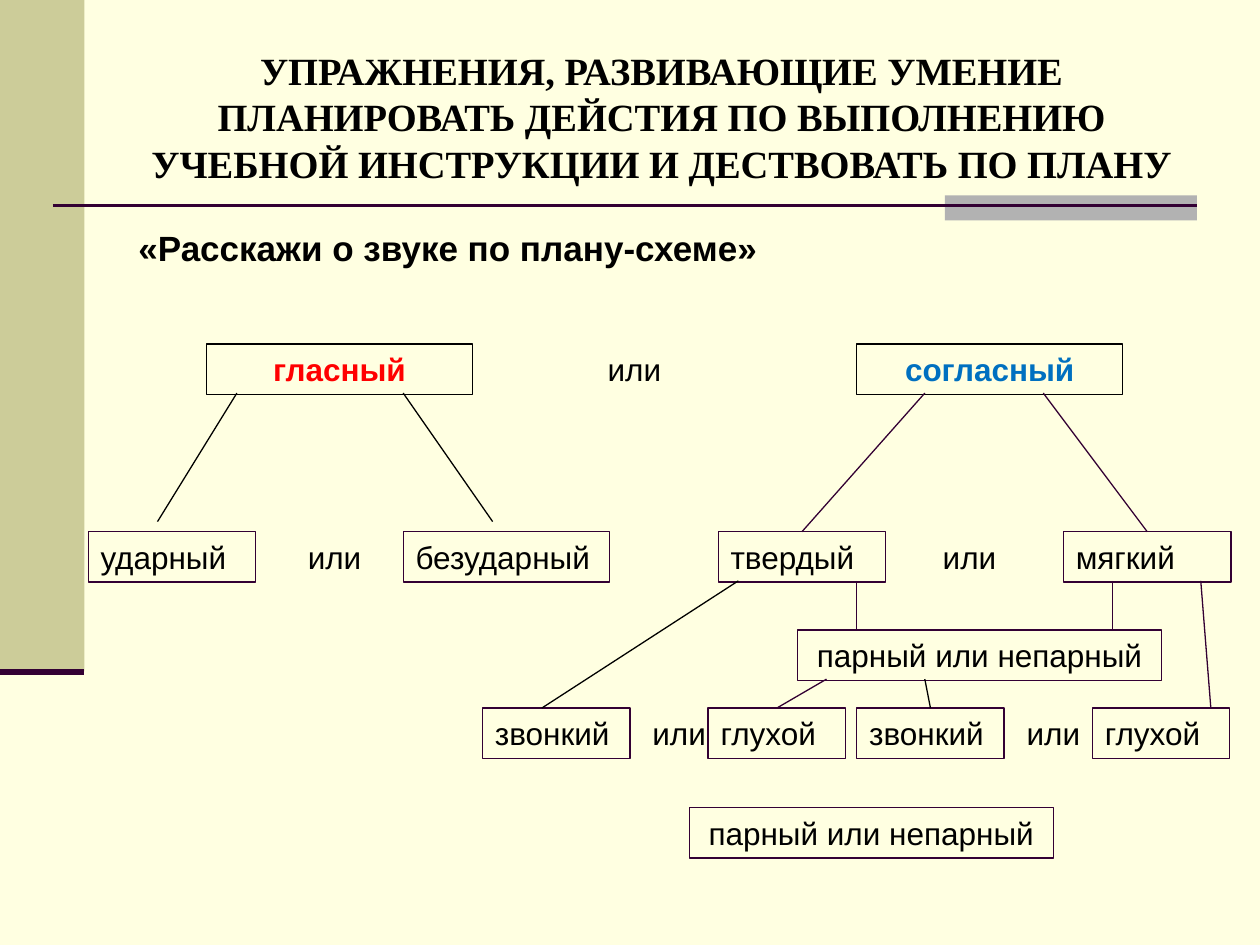
from dataclasses import dataclass

from lxml.etree import SubElement
from pptx import Presentation
from pptx.dml.color import RGBColor
from pptx.enum.shapes import MSO_CONNECTOR, MSO_SHAPE
from pptx.enum.text import MSO_ANCHOR, MSO_AUTO_SIZE, PP_ALIGN
from pptx.oxml.ns import qn
from pptx.util import Inches, Pt

COLUMNS, ROWS = 100, 75
TOP = 0
LEFT, CENTER = PP_ALIGN.LEFT, PP_ALIGN.CENTER


@dataclass(frozen=True)
class Theme:
    background: str = "FFFFE1"
    band: str = "CCCC99"
    accent: str = "B2B2B2"
    plum: str = "330033"
    ink: str = "000000"
    vowel: str = "FF0000"
    consonant: str = "0070C0"
    heading_font: str = "Times New Roman"
    body_font: str = "Arial"
    heading_size: float = 22
    subtitle_size: float = 20
    label_size: float = 18
    thin: float = 0.75
    rule: float = 1.5
    thick: float = 3.5


class SchemeSlide:
    def __init__(self, deck, theme):
        self.theme = theme
        self.page = deck.slides.add_slide(deck.slide_layouts[5])
        self.column = deck.slide_width / COLUMNS
        self.row = deck.slide_height / ROWS
        fill = self.page.background.fill
        fill.solid()
        fill.fore_color.rgb = RGBColor.from_string(theme.background)

    def place(self, column, row, width, height):
        """Turn grid units into slide lengths."""
        return (round(column * self.column), round(row * self.row),
                round(width * self.column), round(height * self.row))

    def add_text(self, box, text, size, color=None, bold=False, align=LEFT, font=None,
                 anchor=MSO_ANCHOR.TOP):
        frame = box.text_frame
        frame.word_wrap = True
        frame.auto_size = MSO_AUTO_SIZE.NONE
        frame.vertical_anchor = anchor
        para = frame.paragraphs[0]
        para.alignment = align
        span = para.add_run()
        span.text = text
        span.font.name = font or self.theme.body_font
        span.font.size = Pt(size)
        span.font.bold = bold
        span.font.color.rgb = RGBColor.from_string(color or self.theme.ink)

    def title(self, text, *area):
        box = self.page.shapes.title
        box.left, box.top, box.width, box.height = self.place(*area)
        self.add_text(box, text, self.theme.heading_size, bold=True, align=CENTER,
                      font=self.theme.heading_font, anchor=MSO_ANCHOR.MIDDLE)

    def block(self, color, *area):
        box = self.page.shapes.add_shape(MSO_SHAPE.RECTANGLE, *self.place(*area))
        box.shadow.inherit = False
        box.fill.solid()
        box.fill.fore_color.rgb = RGBColor.from_string(color)
        box.line.fill.background()

    def node(self, text, *area, color=None, bold=False, align=LEFT, outline=None):
        box = self.page.shapes.add_shape(MSO_SHAPE.RECTANGLE, *self.place(*area))
        box.shadow.inherit = False
        box.fill.background()
        box.line.color.rgb = RGBColor.from_string(outline or self.theme.plum)
        box.line.width = Pt(self.theme.thin)
        self.add_text(box, text, self.theme.label_size, color, bold, align)
        return box

    def label(self, text, *area, size=None, bold=False, align=LEFT):
        box = self.page.shapes.add_textbox(*self.place(*area))
        self.add_text(box, text, size or self.theme.label_size, bold=bold, align=align)

    def line(self, start, end, color, width=None):
        """Draw a line to a grid point, or to the top middle of a box."""
        is_point = isinstance(end, tuple)
        ends = self.place(*start, *(end if is_point else start))
        connector = self.page.shapes.add_connector(MSO_CONNECTOR.STRAIGHT, *ends)
        if not is_point:
            connector.end_connect(end, TOP)
        connector.line.color.rgb = RGBColor.from_string(color)
        connector.line.width = Pt(width or self.theme.thin)
        SubElement(connector.element.spPr, qn("a:effectLst"))


def main():
    deck = Presentation()
    deck.slide_width, deck.slide_height = Inches(10), Inches(7.5)
    theme = Theme()
    ink, plum = theme.ink, theme.plum
    scheme = SchemeSlide(deck, theme)

    scheme.block(theme.band, 0, 0, 6.7, 53.3)
    scheme.block(theme.accent, 75, 15.5, 20, 2)
    scheme.line((4.2, 16.3), (95, 16.3), plum, theme.rule)
    scheme.line((0, 53.3), (6.7, 53.3), plum, theme.thick)

    scheme.title("УПРАЖНЕНИЯ, РАЗВИВАЮЩИЕ УМЕНИЕ ПЛАНИРОВАТЬ ДЕЙСТИЯ ПО ВЫПОЛНЕНИЮ "
                 "УЧЕБНОЙ ИНСТРУКЦИИ И ДЕСТВОВАТЬ ПО ПЛАНУ", 10, 3, 85, 12.5)
    scheme.label("«Расскажи о звуке по плану-схеме»", 10, 17.5, 85, 4.4,
                 size=theme.subtitle_size, bold=True)

    height = 4
    kind_row, quality_row, pair_row, voice_row, last_row = 27.3, 42.2, 50, 56.2, 64.1

    for text, column, color in (("гласный", 16.4, theme.vowel),
                                ("согласный", 68, theme.consonant)):
        scheme.node(text, column, kind_row, 21.1, height, color=color, bold=True,
                    align=CENTER, outline=ink)

    qualities = {text: scheme.node(text, column, quality_row, width, height)
                 for text, column, width in (("ударный", 7, 13.3), ("безударный", 32, 16.4),
                                             ("твердый", 57, 13.3), ("мягкий", 84.4, 13.3))}

    for column, row, width in ((39.8, kind_row, 21.1), (21.1, quality_row, 10.9),
                               (70.3, quality_row, 13.3)):
        scheme.label("или", column, row, width, height, align=CENTER)

    for column, row in ((63.3, pair_row), (54.7, last_row)):
        scheme.node("парный или непарный", column, row, 28.9, height, align=CENTER)

    voices = []
    for voiced_column, or_column, voiceless_column in ((38.3, 50.8, 56.2), (68, 80.5, 86.7)):
        voiced = scheme.node("звонкий", voiced_column, voice_row, 11.7, height)
        scheme.label("или", or_column, voice_row, 6.3, height)
        voiceless = scheme.node("глухой", voiceless_column, voice_row, 10.9, height)
        voices.append((voiced, voiceless))

    kind_foot, quality_foot, pair_foot = (row + 3.9 for row in (kind_row, quality_row, pair_row))
    for start, end, color in (
        ((18.8, kind_foot), (12.5, 41.4), ink),
        ((32, kind_foot), (39.1, 41.4), ink),
        ((73.4, kind_foot), qualities["твердый"], plum),
        ((82.8, kind_foot), qualities["мягкий"], plum),
        ((68, quality_foot), (68, pair_row), plum),
        ((88.3, quality_foot), (88.3, pair_row), plum),
        ((58.6, quality_foot), (43, voice_row), ink),
        ((95.3, quality_foot), (96.1, voice_row), plum),
        ((65.6, pair_foot), voices[0][1], plum),
        ((73.4, pair_foot), voices[1][0], ink),
    ):
        scheme.line(start, end, color)

    deck.save("out.pptx")


if __name__ == "__main__":
    main()
